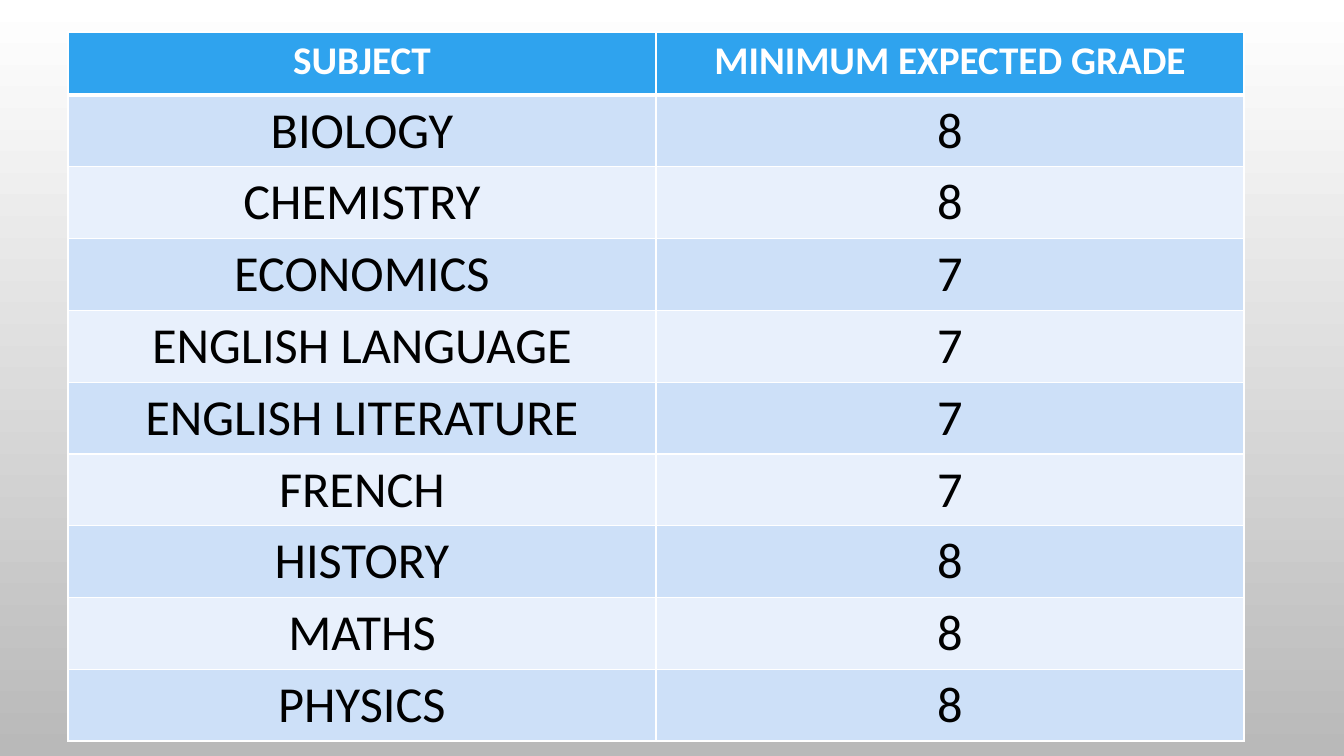
from lxml import etree
from pptx import Presentation
from pptx import util as u
from pptx.dml.color import RGBColor
from pptx.enum import text
from pptx.oxml import ns

PX = 914400 / 100.8
WHITE = RGBColor(0xFF, 0xFF, 0xFF)
BLACK = RGBColor(0x00, 0x00, 0x00)
GREY = RGBColor(0xB9, 0xB9, 0xB9)
HEADER_BLUE = RGBColor(0x2F, 0xA3, 0xEE)
BAND_BLUE = RGBColor(0xCD, 0xE0, 0xF8)
PALE_BLUE = RGBColor(0xE8, 0xF0, 0xFC)

HEADINGS = ("SUBJECT", "MINIMUM EXPECTED GRADE")
GRADES = [
    ("BIOLOGY", "8"),
    ("CHEMISTRY", "8"),
    ("ECONOMICS", "7"),
    ("ENGLISH LANGUAGE", "7"),
    ("ENGLISH LITERATURE", "7"),
    ("FRENCH", "7"),
    ("HISTORY", "8"),
    ("MATHS", "8"),
    ("PHYSICS", "8"),
]


def px(length):
    return u.Emu(round(length * PX))


class GradeSlide:
    font_name = "Calibri"
    heading_format = {"size": u.Pt(28), "bold": True}
    grade_format = {"size": u.Pt(36), "bold": False}

    def __init__(self, deck):
        self.slide = deck.slides.add_slide(deck.slide_layouts[6])

    def background(self, top, bottom):
        fill = self.slide.background.fill
        fill.gradient()
        fill.gradient_angle = 270
        for stop, color in zip(fill.gradient_stops, (top, bottom)):
            stop.color.rgb = color

    def borders(self, cell, bottom_width, top_width):
        properties = cell._tc.get_or_add_tcPr()
        widths = {"lnL": 1, "lnR": 1, "lnT": top_width, "lnB": bottom_width}
        for position, (side, width) in enumerate(widths.items()):
            line = etree.Element(ns.qn(f"a:{side}"), w=str(u.Pt(width)))
            fill = etree.SubElement(line, ns.qn("a:solidFill"))
            etree.SubElement(fill, ns.qn("a:srgbClr"), val=str(WHITE))
            properties.insert(position, line)

    def cell(self, cell, words, fill, color, font_format):
        cell.fill.solid()
        cell.fill.fore_color.rgb = fill
        paragraph = cell.text_frame.paragraphs[0]
        paragraph.alignment = text.PP_ALIGN.CENTER
        run = paragraph.add_run()
        run.text = words
        run.font.color.rgb = color
        for name, value in {"name": self.font_name, **font_format}.items():
            setattr(run.font, name, value)

    def table(self, left, top, column_width, heading_height, grade_height):
        rows = [HEADINGS, *GRADES]
        columns = len(HEADINGS)
        height = heading_height + grade_height * len(GRADES)
        grades = self.slide.shapes.add_table(
            len(rows), columns, px(left), px(top), px(column_width * columns), px(height)
        ).table
        for column in grades.columns:
            column.width = px(column_width)
        for index, row in enumerate(rows):
            heading = index == 0
            grades.rows[index].height = px(heading_height if heading else grade_height)
            band = BAND_BLUE if index % 2 else PALE_BLUE
            for column, words in enumerate(row):
                cell = grades.cell(index, column)
                self.cell(
                    cell,
                    words,
                    HEADER_BLUE if heading else band,
                    WHITE if heading else BLACK,
                    self.heading_format if heading else self.grade_format,
                )
                self.borders(cell, 3 if heading else 1, 3 if index == 1 else 1)


def main():
    deck = Presentation()
    deck.slide_width, deck.slide_height = px(1344), px(756)
    grade_slide = GradeSlide(deck)
    grade_slide.background(WHITE, GREY)
    grade_slide.table(68, 32, 588, 63, 71)
    deck.save("out.pptx")


if __name__ == "__main__":
    main()
